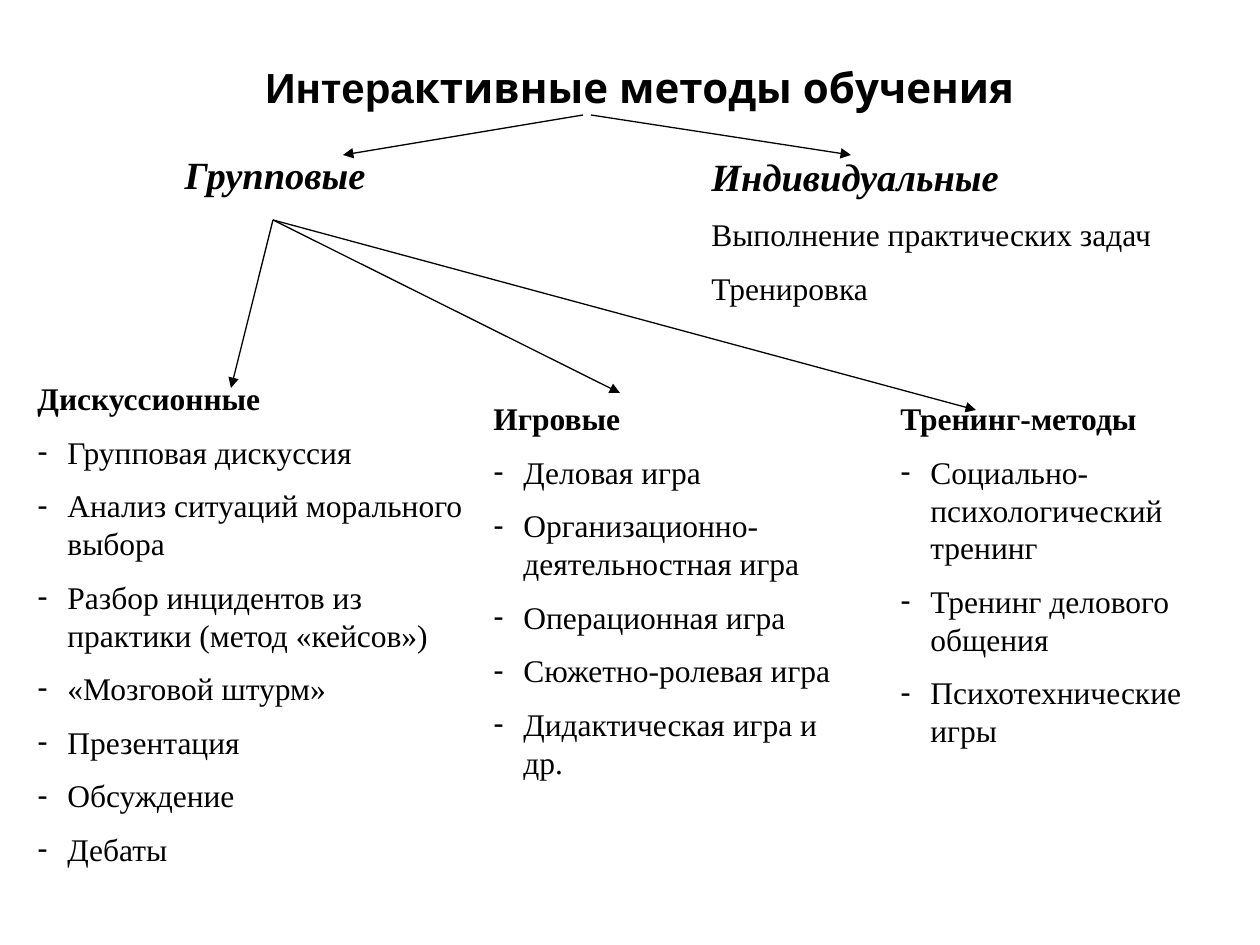
from dataclasses import dataclass

from lxml import etree
from pptx import Presentation
from pptx import util as u
from pptx.dml.color import RGBColor
from pptx.enum import shapes, text
from pptx.oxml.ns import qn

PX = 914400 / 126


@dataclass(frozen=True)
class Theme:
    ink: RGBColor = RGBColor(0, 0, 0)
    paper: RGBColor = RGBColor(255, 255, 255)
    serif: str = "Times New Roman"
    title_fonts: tuple = ("Arial", "League Spartan")
    title_size: int = 24
    branch_size: int = 22
    body_size: int = 18
    gap: int = 9
    line_width: float = 0.75
    hang: int = 30


THEME = Theme()


def emu(px):
    return u.Emu(round(px * PX))


def style(font, size, name=THEME.serif, bold=False, italic=False):
    font.name, font.size = name, u.Pt(size)
    font.bold, font.italic = bold, italic
    font.color.rgb = THEME.ink


def text_area(slide, box, filled=False):
    """Add a text box, or a paper-coloured rectangle, and return its text frame."""
    place = [emu(side) for side in box]
    if filled:
        area = slide.shapes.add_shape(shapes.MSO_SHAPE.RECTANGLE, *place)
        area.shadow.inherit = False
        area.fill.solid()
        area.fill.fore_color.rgb = THEME.paper
        area.line.fill.background()
    else:
        area = slide.shapes.add_textbox(*place)
    frame = area.text_frame
    frame.word_wrap = True
    frame.auto_size = text.MSO_AUTO_SIZE.SHAPE_TO_FIT_TEXT
    frame.vertical_anchor = text.MSO_ANCHOR.TOP
    return frame


def add_dash(paragraph):
    props = paragraph._p.get_or_add_pPr()
    props.set("marL", str(emu(THEME.hang)))
    props.set("indent", str(-emu(THEME.hang)))
    etree.SubElement(props, qn("a:buFont")).set("typeface", "Arial")
    etree.SubElement(props, qn("a:buChar")).set("char", "-")


def write_group(frame, heading, items, heading_size, italic=False,
                dashed=False, align=text.PP_ALIGN.LEFT):
    """Write a bold heading with its items below it."""
    frame.text = "\n".join([heading, *items])
    for i, paragraph in enumerate(frame.paragraphs):
        paragraph.alignment = align
        is_heading = i == 0
        if not is_heading:
            paragraph.space_before = u.Pt(THEME.gap)
            if dashed:
                add_dash(paragraph)
        style(paragraph.runs[0].font,
              heading_size if is_heading else THEME.body_size,
              bold=is_heading, italic=is_heading and italic)


def title(slide, box, parts):
    frame = text_area(slide, box)
    frame.auto_size = text.MSO_AUTO_SIZE.NONE
    frame.vertical_anchor = text.MSO_ANCHOR.MIDDLE
    for part, name in zip(parts, THEME.title_fonts):
        run = frame.paragraphs[0].add_run()
        run.text = part
        style(run.font, THEME.title_size, name, bold=True)


def branch(slide, box, heading, items=(), align=text.PP_ALIGN.LEFT):
    write_group(text_area(slide, box), heading, items, THEME.branch_size,
                italic=True, align=align)


def method_column(slide, box, heading, items, filled):
    write_group(text_area(slide, box, filled), heading, items,
                THEME.body_size, dashed=True)


def arrow(slide, start, end):
    link = slide.shapes.add_connector(
        shapes.MSO_CONNECTOR.STRAIGHT, *(emu(v) for v in (*start, *end)))
    link.line.color.rgb = THEME.ink
    link.line.width = u.Pt(THEME.line_width)
    etree.SubElement(link.line._get_or_add_ln(), qn("a:tailEnd")).set("type", "triangle")
    etree.SubElement(link._element.spPr, qn("a:effectLst"))


COLUMNS = [
    ((25, 373, 459, 524), "Дискуссионные", [
        "Групповая дискуссия",
        "Анализ ситуаций морального выбора",
        "Разбор инцидентов из практики (метод «кейсов»)",
        "«Мозговой штурм»",
        "Презентация",
        "Обсуждение",
        "Дебаты",
    ], True),
    ((481, 393, 378, 411), "Игровые", [
        "Деловая игра",
        "Организационно-деятельностная игра",
        "Операционная игра",
        "Сюжетно-ролевая игра",
        "Дидактическая игра и др.",
    ], False),
    ((888, 393, 338, 373), "Тренинг-методы", [
        "Социально-психологический тренинг",
        "Тренинг делового общения",
        "Психотехнические игры",
    ], True),
]


def main():
    deck = Presentation()
    deck.slide_width, deck.slide_height = emu(1260), emu(945)
    slide = deck.slides.add_slide(deck.slide_layouts[6])

    title(slide, (253, 45, 833, 84), ("Интера", "ктивные методы обучения"))
    branch(slide, (144, 145, 262, 59), "Групповые", align=text.PP_ALIGN.CENTER)
    branch(slide, (699, 147, 494, 174), "Индивидуальные",
           ["Выполнение практических задач", "Тренировка"])
    arrow(slide, (583, 115), (343, 155))
    arrow(slide, (591, 115), (851, 155))

    for column in COLUMNS:
        method_column(slide, *column)
    for tip in ((231, 388), (620, 393), (976, 410)):
        arrow(slide, (273, 220), tip)

    deck.save("out.pptx")


if __name__ == "__main__":
    main()
